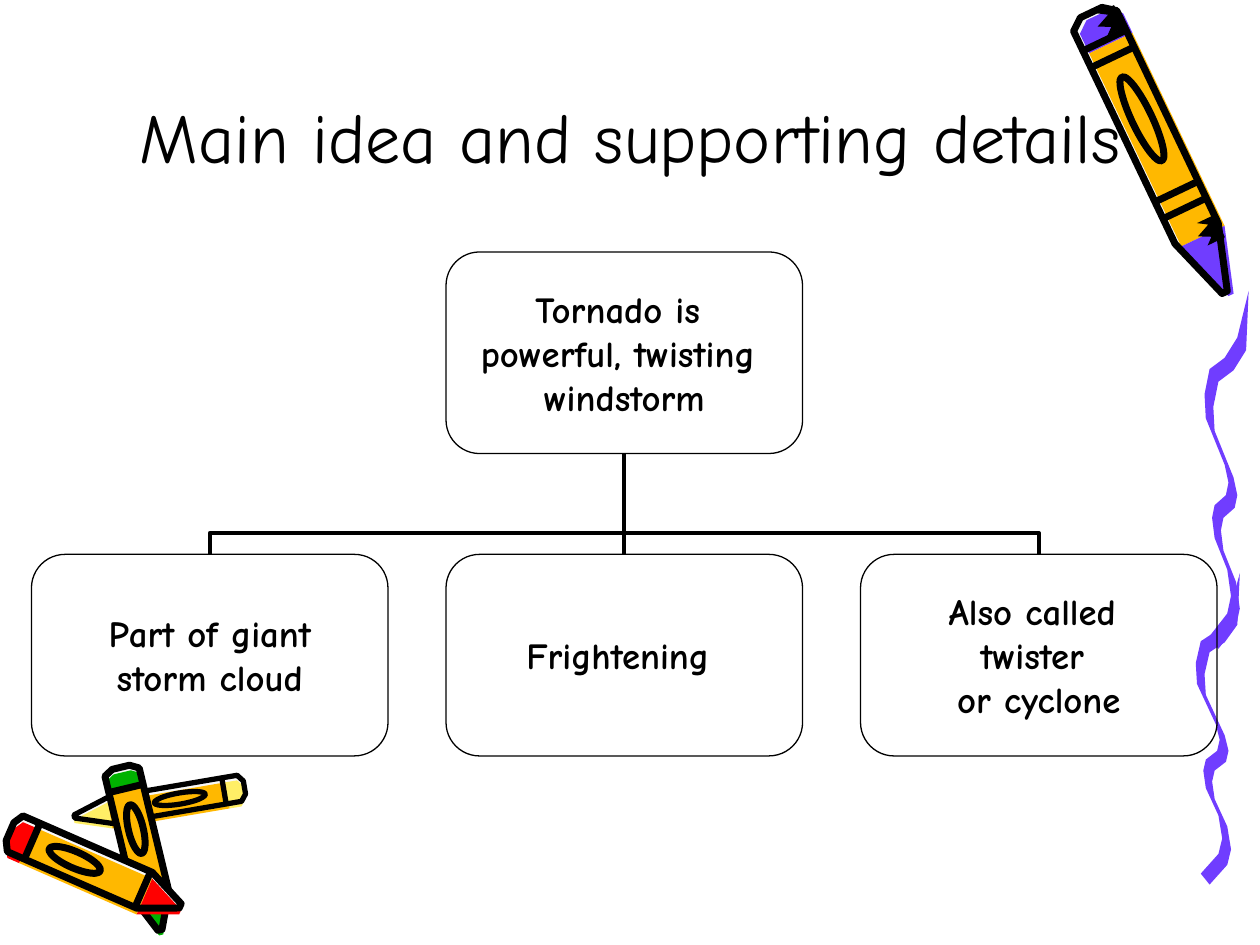
"""Build a tornado main-idea slide with crayons drawn from one shared pattern."""
from collections import namedtuple
from math import atan2, degrees, hypot
from lxml.etree import SubElement
from pptx import Presentation
from pptx.dml.color import RGBColor
from pptx.enum.shapes import MSO_CONNECTOR as CONN, MSO_SHAPE as SHAPE
from pptx.enum.text import MSO_ANCHOR as ANCHOR, MSO_AUTO_SIZE as FIT, PP_ALIGN as ALIGN
from pptx.oxml.ns import qn
from pptx.util import Inches, Pt

THEME = {
    "font": "Comic Neue", "title": 40, "body": 21,
    "box_line": 0.75, "link_line": 2.25,
    "black": "000000", "purple": "703DFF", "orange": "FFB800", "white": "F8F8F8",
    "yellow": "FFEF66", "red": "FF0000", "green": "00B200",
}

TITLE = "Main idea and supporting details"
MAIN_IDEA = ["Tornado is ", "powerful, twisting ", "windstorm"]
DETAILS = [
    ["Part of giant", "storm cloud"],
    ["Frightening "],
    ["Also called ", "twister ", "or cyclone"],
]

Crayon = namedtuple("Crayon", "color blunt tip width ink shift bands teeth")
CRAYONS = [
    Crayon("yellow", (1.94, 6.25), (0.59, 6.48), 0.21, 3, (0, 0.04), (0.12,), ()),
    Crayon("green", (0.96, 6.09), (1.27, 7.38), 0.28, 4, (0.01, 0.04), (0.13,), ()),
    Crayon("red", (0.08, 6.6), (1.43, 7.19), 0.31, 4, (0, 0.05), (0.13, 0.78), ()),
    Crayon("purple", (8.66, 0.1), (9.72, 2.32), 0.38, 4, (0.05, 0.02),
           (0.1, 0.16, 0.64, 0.7), (0.06, 0.81)),
]
CAP_END, SHOULDER = 0.1, 0.79
CAP = [(CAP_END, -0.5), (0.03, -0.5), (0, -0.25), (0, 0.25), (0.03, 0.5), (CAP_END, 0.5)]
BARREL = [(CAP_END, -0.5), (CAP_END, 0.5), (SHOULDER, 0.5), (SHOULDER, -0.5)]
POINT = [(SHOULDER, 0.5), (1, 0.06), (1, -0.06), (SHOULDER, -0.5)]
SILHOUETTE = CAP + POINT
LABEL_AT, LABEL_LENGTH, LABEL_WIDTH = 0.38, 0.3, 0.42
TOOTH_STEP, TOOTH_DEPTHS = 0.02, (0.1, 0.3, 0, 0.25, 0.1)

WAVE = [(0.35, 0), (0.26, 0.37), (0.16, 0.53), (0.04, 0.62), (0, 0.82), (0.01, 1.01),
        (0.16, 1.38), (0.19, 1.52), (0.17, 1.62), (0.08, 1.7), (0.06, 1.8), (0.08, 1.96),
        (0.18, 2.21), (0.21, 2.42), (0.18, 2.56), (0.04, 2.74)]
WAVE_THICKNESS = (0.07, 0.1)
SQUIGGLES = [(9.49, 4.55, 0.87), (9.56, 2.31, 1)]

BOX_W, BOX_H, BOX_LEFT, BOX_GAP = 2.83, 1.6, 0.25, 0.46
MAIN_TOP, DETAIL_TOP, BUS_Y = 2, 4.4, 4.23


def color(name):
    return RGBColor.from_string(THEME[name])


def outline(sp, width):
    sp.line.color.rgb = color("black")
    sp.line.width = Pt(width)


def add_path(s, points, fill=None, ink=None, close=True):
    corners = [(Inches(x), Inches(y)) for x, y in points]
    builder = s.shapes.build_freeform(*corners[0])
    builder.add_line_segments(corners[1:], close=close)
    sp = builder.convert_to_shape()
    sp.shadow.inherit = False
    if fill:
        sp.fill.solid()
        sp.fill.fore_color.rgb = color(fill)
    else:
        sp.fill.background()
    if ink:
        outline(sp, ink)
    else:
        sp.line.fill.background()


def add_line(s, start, end, width):
    line = s.shapes.add_connector(CONN.STRAIGHT, *map(Inches, (*start, *end)))
    SubElement(line._element.spPr, qn("a:effectLst"))
    outline(line, width)


def add_shape(s, kind, left, top, width, height, ink):
    sp = s.shapes.add_shape(kind, *map(Inches, (left, top, width, height)))
    sp.shadow.inherit = False
    sp.fill.background()
    outline(sp, ink)
    return sp


def add_crayon(s, crayon):
    (x0, y0), (x1, y1) = crayon.blunt, crayon.tip
    dx, dy = x1 - x0, y1 - y0
    length = hypot(dx, dy)

    def place(points, shift=(0, 0)):
        side_x, side_y = dy / length * crayon.width, -dx / length * crayon.width
        return [(x0 + along * dx + across * side_x + shift[0],
                 y0 + along * dy + across * side_y + shift[1]) for along, across in points]

    add_path(s, place(SILHOUETTE), fill="white")
    for part, fill in ((CAP, crayon.color), (BARREL, "orange"), (POINT, crayon.color)):
        add_path(s, place(part, crayon.shift), fill=fill)
    for at in crayon.teeth:
        start = at - TOOTH_STEP * len(TOOTH_DEPTHS) / 2
        bites = [(start + i * TOOTH_STEP, depth) for i, depth in enumerate(TOOTH_DEPTHS)]
        add_path(s, place([(start, 0.5), *bites, (bites[-1][0], 0.5)]), fill="black")
    add_path(s, place(SILHOUETTE), ink=crayon.ink)
    for at in crayon.bands:
        add_line(s, *place([(at, -0.5), (at, 0.5)]), crayon.ink)

    (center_x, center_y), = place([(LABEL_AT, 0)])
    w, h = LABEL_LENGTH * length, LABEL_WIDTH * crayon.width
    label = add_shape(s, SHAPE.OVAL, center_x - w / 2, center_y - h / 2, w, h, crayon.ink)
    label.rotation = degrees(atan2(dy, dx))


def add_squiggle(s, left, top, stretch):
    near = [(left + x, top + y * stretch) for x, y in WAVE]
    thick_x, thick_y = WAVE_THICKNESS
    far = [(x + thick_x, y + thick_y * stretch) for x, y in near[1:]]
    add_path(s, near + far[::-1], fill="purple")


def write(tf, lines, size, bold, anchor):
    tf.margin_left = tf.margin_right = tf.margin_top = tf.margin_bottom = 0
    tf.auto_size = FIT.NONE
    tf.vertical_anchor = anchor
    tf.text = "\n".join(lines)
    for p in tf.paragraphs:
        p.alignment = ALIGN.CENTER
        p.font.name = THEME["font"]
        p.font.size = Pt(size)
        p.font.bold = bold
        p.font.color.rgb = color("black")


def add_title(s):
    title = s.shapes.title
    title.left, title.top, title.width, title.height = map(Inches, (0, 0.33, 10, 1.08))
    write(title.text_frame, [TITLE], THEME["title"], False, ANCHOR.BOTTOM)
    title._element.getparent().append(title._element)


def add_box(s, left, top, lines):
    sp = add_shape(s, SHAPE.ROUNDED_RECTANGLE, left, top, BOX_W, BOX_H, THEME["box_line"])
    write(sp.text_frame, lines, THEME["body"], True, ANCHOR.MIDDLE)
    sp.text_frame.word_wrap = False


def add_tree(s):
    lefts = [BOX_LEFT + i * (BOX_W + BOX_GAP) for i in range(len(DETAILS))]
    main_left = lefts[len(lefts) // 2]
    trunk_x, trunk_y = main_left + BOX_W / 2, MAIN_TOP + BOX_H
    for left in lefts:
        x = left + BOX_W / 2
        if left == main_left:
            add_line(s, (x, DETAIL_TOP), (x, trunk_y), THEME["link_line"])
        else:
            elbow = [(x, DETAIL_TOP), (x, BUS_Y), (trunk_x, BUS_Y), (trunk_x, trunk_y)]
            add_path(s, elbow, ink=THEME["link_line"], close=False)
    add_box(s, main_left, MAIN_TOP, MAIN_IDEA)
    for left, lines in zip(lefts, DETAILS):
        add_box(s, left, DETAIL_TOP, lines)


def main():
    prs = Presentation()
    prs.slide_width, prs.slide_height = Inches(10), Inches(7.5)
    s = prs.slides.add_slide(prs.slide_layouts[5])
    for squiggle in SQUIGGLES:
        add_squiggle(s, *squiggle)
    for crayon in CRAYONS:
        add_crayon(s, crayon)
    add_title(s)
    add_tree(s)
    prs.save("out.pptx")


if __name__ == "__main__":
    main()
